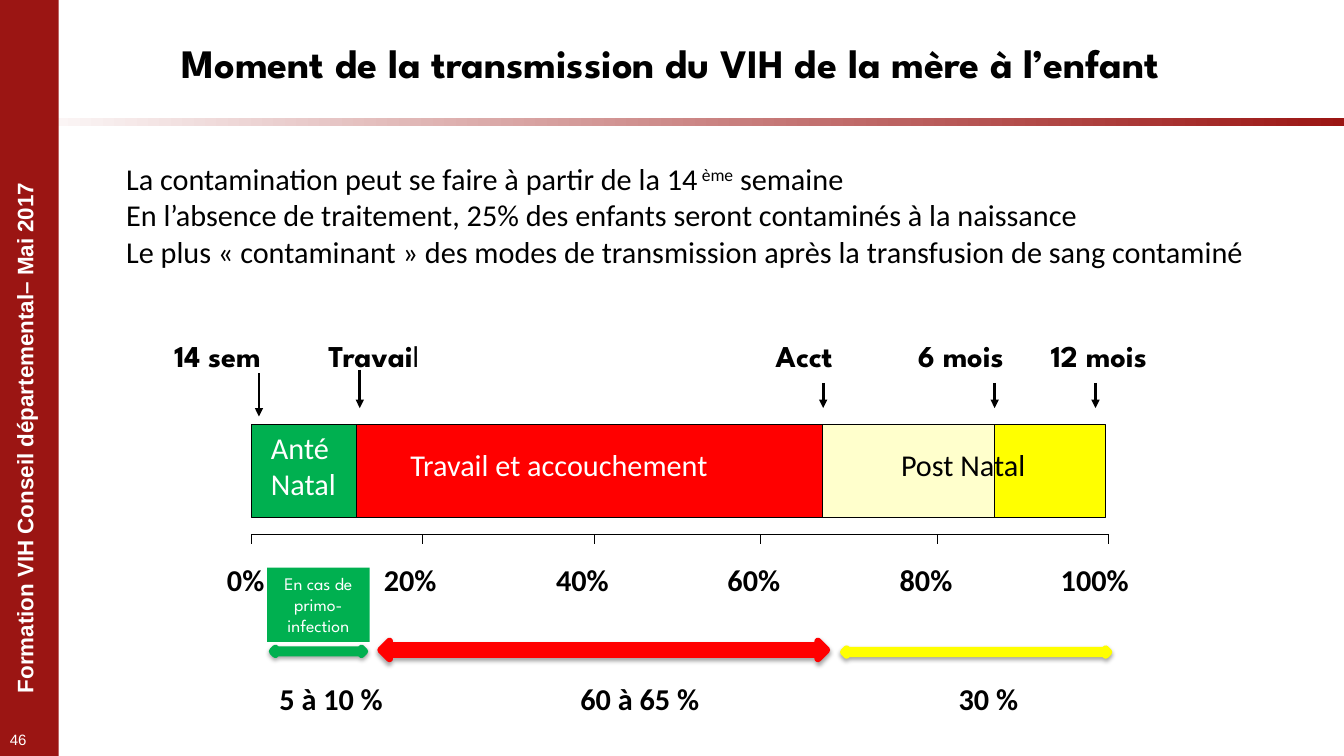
import pptx
import pptx.util
import pptx.dml.color
import pptx.enum.shapes
import pptx.enum.text
import lxml.etree

Pt = pptx.util.Pt
KIND = pptx.enum.shapes.MSO_SHAPE
ALIGN = pptx.enum.text.PP_ALIGN
ANCHOR = pptx.enum.text.MSO_ANCHOR
NS = "http://schemas.openxmlformats.org/drawingml/2006/main"

# Content
TITLE = "Moment de la transmission du VIH de la mère à l’enfant"
SIDE = "Formation VIH Conseil départemental– Mai 2017"
PAGE = "46"
FACTS = [
    [("La contamination peut se faire à partir de la 14", {}),
     (" ème", {"base": 30}), (" semaine", {})],
    "En l’absence de traitement, 25% des enfants seront contaminés à la naissance",
    "Le plus «\u00a0contaminant\u00a0» des modes de transmission après la transfusion de sang contaminé",
]
EDGES = [179.5, 255, 587.5, 710.5, 789.5]
FILLS = ["00B050", "FF0000", "FFFFCC", "FFFF00"]
PHASES = [  # words, left, top, width, colour
    ("Anté Natal", 186.5, 303, 72, "FFFFFF"),
    ("Travail et accouchement", 286, 315.5, 253, "FFFFFF"),
    ("Post Natal", 636.5, 315.5, 151, "000000"),
]
DATES = [  # words, text left, width, arrow x, arrow top, arrow end
    ("14 sem", 117.5, 108, 185, 266.5, 297.5),
    ([[("Travai", {}), ("l", {"bold": False})]], 227.5, 111, 257, 264, 291.5),
    ("Acct", 547, 76, 588, 273.5, 291.5),
    ("6 mois", 648.5, 108, 710.5, 273.5, 291.5),
    ("12 mois", 743.5, 137, 782.5, 273.5, 291.5),
]
TICKS = [  # words, tick x, text centre
    ("0%", 179.5, 175.5), ("20%", 301.5, 293), ("40%", 424.5, 416),
    ("60%", 543.5, 538.5), ("80%", 669.5, 661.5), ("100%", 792, 782),
]
SPANS = [  # words, text centre, arrow left, top, width, height, fill, line
    ("5 à 10 %", 236.5, 194.5, 463, 66, 4.5, "00B050", "00B050"),
    ("60 à 65 %", 457, 272, 458, 318.5, 12.5, "FF0000", "FF0000"),
    ("30 %", 706, 602.5, 463.5, 189.5, 4.5, "FF0000", "FFFF00"),
]
PRIMO = "En cas de primo-infection"

deck = pptx.Presentation()
deck.slide_width, deck.slide_height = Pt(960), Pt(540)
slide = deck.slides.add_slide(deck.slide_layouts[5])
shapes = slide.shapes


def rgb(code):
    return pptx.dml.color.RGBColor.from_string(code)


def write(words, box=None, at=None, size=21.6, face="Calibri", color="000000",
          bold=False, align=ALIGN.LEFT, anchor=ANCHOR.TOP, inset=(7.2, 3.6), wrap=True):
    """Fill a shape, or a new text box, with paragraphs of runs."""
    box = box or shapes.add_textbox(*map(Pt, at))
    frame = box.text_frame
    frame.word_wrap, frame.vertical_anchor = wrap, anchor
    frame.auto_size = pptx.enum.text.MSO_AUTO_SIZE.NONE
    frame.margin_left = frame.margin_right = Pt(inset[0])
    frame.margin_top = frame.margin_bottom = Pt(inset[1])
    for i, line in enumerate([words] if isinstance(words, str) else words):
        par = frame.add_paragraph() if i else frame.paragraphs[0]
        par.alignment = align
        for part, own in [(line, {})] if isinstance(line, str) else line:
            run = par.add_run()
            run.text = part
            font = run.font
            font.name, font.size = face, Pt(size)
            font.bold = own.get("bold", bold)
            font.color.rgb = rgb(color)
            if "base" in own:
                run._r.get_or_add_rPr().set("baseline", str(own["base"] * 1000))
    return box


def block(at, fill, line=None, width=0.75, kind=KIND.RECTANGLE):
    shape = shapes.add_shape(kind, *map(Pt, at))
    shape.shadow.inherit = False
    shape.fill.solid()
    shape.fill.fore_color.rgb = rgb(fill)
    if line:
        shape.line.color.rgb = rgb(line)
        shape.line.width = Pt(width)
    else:
        shape.line.fill.background()
    return shape


def rule(x1, y1, x2, y2, width=0.75, head=False):
    line = shapes.add_connector(pptx.enum.shapes.MSO_CONNECTOR.STRAIGHT,
                                *map(Pt, (x1, y1, x2, y2)))
    line.line.color.rgb = rgb("000000")
    line.line.width = Pt(width)
    props = line._element.spPr
    if head:
        lxml.etree.SubElement(props.find(f"{{{NS}}}ln"), f"{{{NS}}}tailEnd", type="triangle")
    lxml.etree.SubElement(props, f"{{{NS}}}effectLst")


def shade(shape):
    """Soft shadow straight below a shape."""
    effects = shape._element.spPr.find(f"{{{NS}}}effectLst")
    cast = lxml.etree.SubElement(effects, f"{{{NS}}}outerShdw", blurRad=str(Pt(3.1)),
                                 dist=str(Pt(1.8)), dir="5400000", rotWithShape="0")
    tint = lxml.etree.SubElement(cast, f"{{{NS}}}srgbClr", val="000000")
    lxml.etree.SubElement(tint, f"{{{NS}}}alpha", val="35000")


# Frame: fading band, side bar, page number
band = block((0, 84.2, 960, 5.8), "FFFFFF")
band.fill.gradient()
band.fill.gradient_angle = 0
for stop, code, place in zip(band.fill.gradient_stops, ("FFFFFF", "9B1513"), (0, 1)):
    stop.color.rgb = rgb(code)
    stop.position = place
block((0, 0, 42, 540), "9B1513")
side = write(SIDE, at=(-176.5, 299.5, 388, 26.5), size=16, face="Arial",
             color="FFFFFF", bold=True, align=ALIGN.CENTER, wrap=False)
side.rotation = 270
write(PAGE, at=(0, 518.5, 39.5, 20), size=10.7, face="Arial", color="FFFFFF")

# Title and facts
title = shapes.title
title.left, title.top, title.width, title.height = map(Pt, (70, 13, 818, 62.5))
write(TITLE, box=title, size=28.8, face="League Spartan", bold=True,
      align=ALIGN.CENTER, anchor=ANCHOR.MIDDLE)
write(FACTS, at=(83, 111, 853, 86))

# Time bar
for left, right, fill in zip(EDGES, EDGES[1:], FILLS):
    block((left, 303, right - left, 66.5), fill, "000000")
for words, x, y, w, color in PHASES:
    write(words, at=(x, y, w, 60 if y < 310 else 33), color=color)
for words, x, w, tip, top, end in DATES:
    write(words, at=(x, 237.3, w, 33), face="League Spartan", bold=True)
    rule(tip, top, tip, end, width=2, head=True)

# Percent axis
rule(TICKS[0][1], 381.5, TICKS[-1][1], 381.5)
for words, x, mid in TICKS:
    rule(x, 381.5, x, 388.5)
    write(words, at=(mid - 25, 401, 50, 26), bold=True, align=ALIGN.CENTER,
          inset=(0, 0), wrap=False)

# Share of each phase
for words, mid, x, y, w, h, fill, line in SPANS:
    shade(block((x, y, w, h), fill, line, 5, KIND.LEFT_RIGHT_ARROW))
    write(words, at=(mid - 66, 482.5, 132, 33), bold=True, align=ALIGN.CENTER)
write(PRIMO, box=block((190.8, 405.5, 73.2, 53), "00B050"), size=12.6,
      face="League Spartan", color="FFFFFF", align=ALIGN.CENTER)

deck.save("out.pptx")
